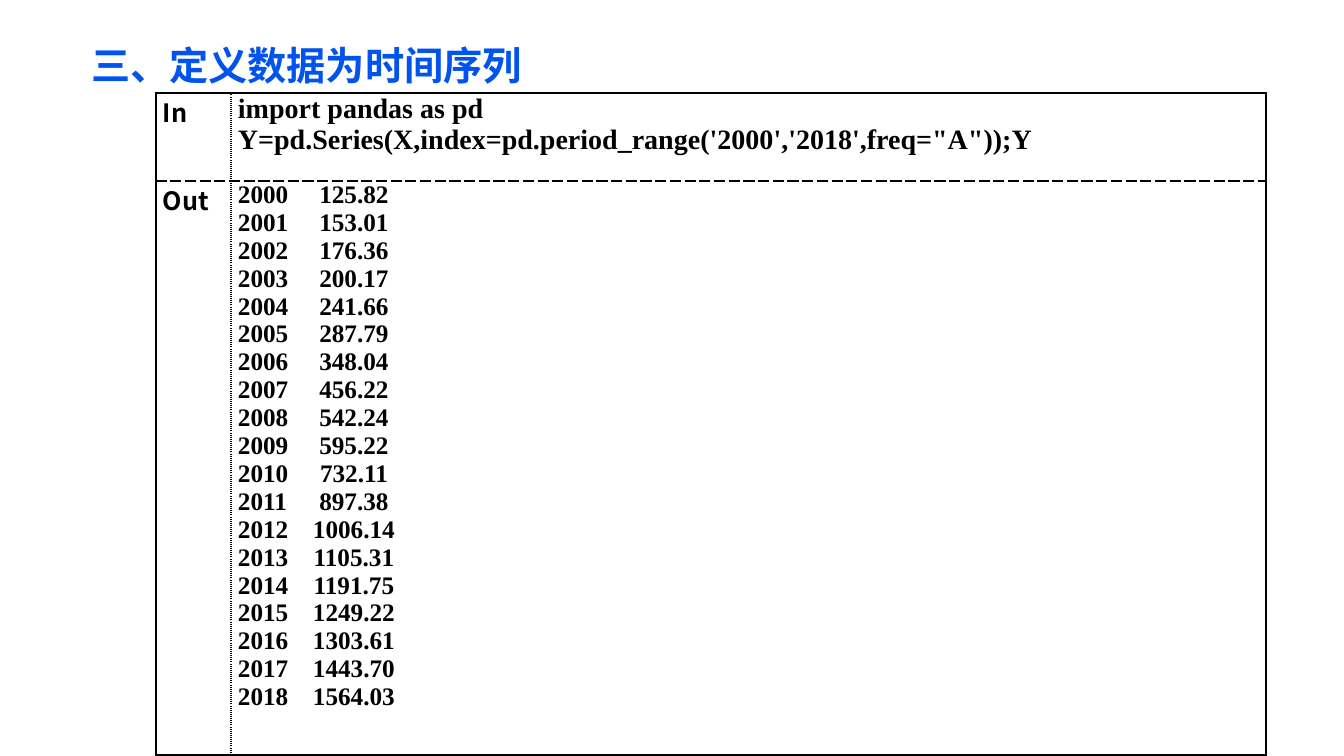
from dataclasses import dataclass

from lxml import etree
from pptx import Presentation
from pptx.dml.color import RGBColor
from pptx.enum.text import MSO_ANCHOR, MSO_AUTO_SIZE, PP_ALIGN
from pptx.oxml.ns import qn
from pptx.util import Pt

TOP, LEFT = MSO_ANCHOR.TOP, PP_ALIGN.LEFT
NO_FIT = MSO_AUTO_SIZE.NONE
EMU_PER_PX = 914400 / 100.8
TITLE_ONLY = 5


@dataclass(frozen=True)
class Theme:
    heading_font: str = "Noto Sans CJK SC"
    code_font: str = "Times New Roman"
    blue: str = "0053EC"
    black: str = "000000"
    title_size: int = 28
    code_size: int = 20
    body_size: int = 18
    border_width: int = 1


THEME = Theme()

TITLE = "三、定义数据为时间序列"
CODE = ["import pandas as pd",
        "Y=pd.Series(X,index=pd.period_range('2000','2018',freq=\"A\"));Y"]
FIRST_YEAR = 2000
VALUES = [125.82, 153.01, 176.36, 200.17, 241.66, 287.79, 348.04, 456.22,
          542.24, 595.22, 732.11, 897.38, 1006.14, 1105.31, 1191.75, 1249.22,
          1303.61, 1443.70, 1564.03]


def px(length):
    return round(length * EMU_PER_PX)


def style(para, font_name, size, color):
    font = para.font
    font.name, font.size, font.bold = font_name, Pt(size), True
    font.color.rgb = RGBColor.from_string(color)
    east_asian = etree.SubElement(font._element, qn("a:ea"))
    east_asian.set("typeface", font_name)


def add_title(page, text):
    title = page.shapes.title
    title.left, title.top, title.width, title.height = map(px, (52, 13, 1276, 82))
    frame = title.text_frame
    frame.word_wrap, frame.auto_size = True, NO_FIT
    frame.vertical_anchor = TOP
    frame.text = text
    para = frame.paragraphs[0]
    para.alignment, para.line_spacing = LEFT, 1.5
    para._p.get_or_add_pPr().set("indent", str(px(29)))
    style(para, THEME.heading_font, THEME.title_size, THEME.blue)


def set_tab(para, position):
    """Centre the text after a tab on the given position."""
    tabs = etree.Element(qn("a:tabLst"))
    etree.SubElement(tabs, qn("a:tab"), pos=str(px(position)), algn="ctr")
    para._p.get_or_add_pPr().insert(0, tabs)


def set_borders(cell, dashes):
    """Draw the left, right, top and bottom borders, in that order."""
    properties = cell._tc.get_or_add_tcPr()
    for index, (side, dash) in enumerate(zip("LRTB", dashes)):
        line = etree.Element(qn(f"a:ln{side}"), w=str(Pt(THEME.border_width)))
        fill = etree.SubElement(line, qn("a:solidFill"))
        etree.SubElement(fill, qn("a:srgbClr"), val=THEME.black)
        etree.SubElement(line, qn("a:prstDash"), val=dash)
        properties.insert(index, line)


def fill_cell(cell, lines, font_name, size, tab=None):
    cell.fill.background()
    cell.margin_left = cell.margin_right = px(7)
    cell.margin_top = cell.margin_bottom = 0
    cell.vertical_anchor = TOP
    cell.text = "\n".join(lines)
    for para in cell.text_frame.paragraphs:
        style(para, font_name, size, THEME.black)
        if tab:
            set_tab(para, tab)


def add_listing(page):
    columns, rows = (75, 1035), (88, 574)
    table = page.shapes.add_table(2, 2, px(156), px(93), px(sum(columns)),
                                  px(sum(rows))).table
    table.first_row = table.horz_banding = False
    for column, width in zip(table.columns, columns):
        column.width = px(width)
    for row, height in zip(table.rows, rows):
        row.height = px(height)

    # Labels, code and yearly values
    series = [f"{year}\t{value:.2f}" for year, value in enumerate(VALUES, FIRST_YEAR)]
    fill_cell(table.cell(0, 0), ["In"], THEME.heading_font, THEME.body_size)
    fill_cell(table.cell(0, 1), CODE, THEME.code_font, THEME.code_size)
    fill_cell(table.cell(1, 0), ["Out"], THEME.heading_font, THEME.body_size)
    fill_cell(table.cell(1, 1), series, THEME.code_font, THEME.body_size, tab=116)

    # Solid frame, dotted column rule, dashed row rule
    across = ("solid", "sysDot", "solid")
    down = ("solid", "dash", "solid")
    for row in range(2):
        for column in range(2):
            set_borders(table.cell(row, column),
                        across[column:column + 2] + down[row:row + 2])


def main():
    deck = Presentation()
    deck.slide_width, deck.slide_height = px(1344), px(756)
    page = deck.slides.add_slide(deck.slide_layouts[TITLE_ONLY])
    add_title(page, TITLE)
    add_listing(page)
    deck.save("out.pptx")


if __name__ == "__main__":
    main()
